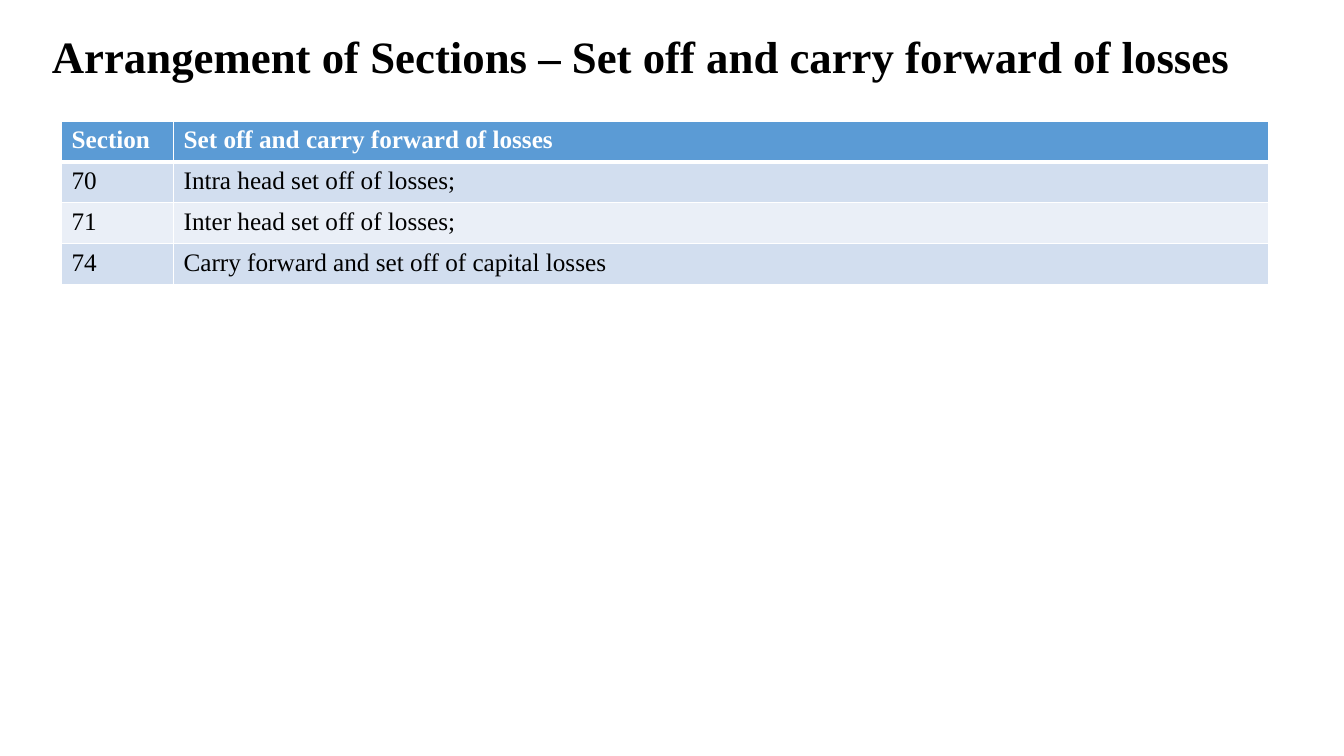
from dataclasses import dataclass

from lxml.etree import SubElement
from pptx import Presentation
from pptx.dml.color import RGBColor as Color
from pptx.enum.text import MSO_ANCHOR as Anchor, PP_ALIGN as Align
from pptx.oxml.ns import qn
from pptx.util import Pt


@dataclass(frozen=True)
class Theme:
    font: str = "Times New Roman"
    text: str = "000000"
    light: str = "FFFFFF"
    header: str = "5B9BD5"
    bands: tuple = ("D2DEEF", "EAEFF7")
    title_size: int = 32
    table_size: int = 18
    line: int = 1
    header_line: int = 3


class SlideBuilder:
    def __init__(self, slide, theme):
        self.slide = slide
        self.theme = theme

    def add_text(self, paragraph, text, color, align=Align.LEFT, **formats):
        paragraph.alignment = align
        run = paragraph.add_run()
        run.text = text
        for name, value in {"name": self.theme.font, **formats}.items():
            setattr(run.font, name, value)
        run.font.color.rgb = Color.from_string(color)

    def title(self, text, left, top, width, height):
        shape = self.slide.shapes.add_textbox(Pt(left), Pt(top), Pt(width), Pt(height))
        frame = shape.text_frame
        for name, value in {"word_wrap": True, "vertical_anchor": Anchor.MIDDLE}.items():
            setattr(frame, name, value)
        paragraph = frame.paragraphs[0]
        paragraph.line_spacing = 0.9
        self.add_text(paragraph, text, self.theme.text, size=Pt(self.theme.title_size), bold=True)

    def border(self, cell, side, width):
        properties = cell._tc.get_or_add_tcPr()
        line = SubElement(properties, qn(f"a:ln{side}"), w=str(Pt(width)))
        fill = SubElement(line, qn("a:solidFill"))
        SubElement(fill, qn("a:srgbClr"), val=self.theme.light)

    def cell(self, cell, text, row, align):
        theme = self.theme
        is_header = row == 0
        widths = {
            "L": theme.line,
            "R": theme.line,
            "T": theme.header_line if row == 1 else theme.line,
            "B": theme.header_line if is_header else theme.line,
        }
        for side, width in widths.items():
            self.border(cell, side, width)
        background = theme.header if is_header else theme.bands[(row - 1) % 2]
        cell.fill.solid()
        cell.fill.fore_color.rgb = Color.from_string(background)
        self.add_text(
            cell.text_frame.paragraphs[0],
            text,
            theme.light if is_header else theme.text,
            align,
            size=Pt(theme.table_size),
            bold=is_header,
        )

    def table(self, rows, left, top, column_widths, row_height, alignments):
        shape = self.slide.shapes.add_table(
            len(rows), len(column_widths), Pt(left), Pt(top),
            Pt(sum(column_widths)), Pt(row_height * len(rows)),
        )
        table = shape.table
        for column, width in zip(table.columns, column_widths):
            column.width = Pt(width)
        for row, texts in enumerate(rows):
            for column, text in enumerate(texts):
                self.cell(table.cell(row, column), text, row, alignments[column])


def main():
    presentation = Presentation()
    presentation.slide_width = Pt(960)
    presentation.slide_height = Pt(540)
    slide = presentation.slides.add_slide(presentation.slide_layouts[6])
    builder = SlideBuilder(slide, Theme())
    builder.title(
        "Arrangement of Sections – Set off and carry forward of losses",
        30, 8, 858.5, 68.5,
    )
    sections = [
        ("Section", "Set off and carry forward of losses"),
        ("70", "Intra head set off of losses;"),
        ("71", "Inter head set off of losses;"),
        ("74", "Carry forward and set off of capital losses"),
    ]
    builder.table(sections, 44, 86.5, (80, 782.5), 29.2, (Align.LEFT, Align.JUSTIFY))
    presentation.save("out.pptx")


if __name__ == "__main__":
    main()
